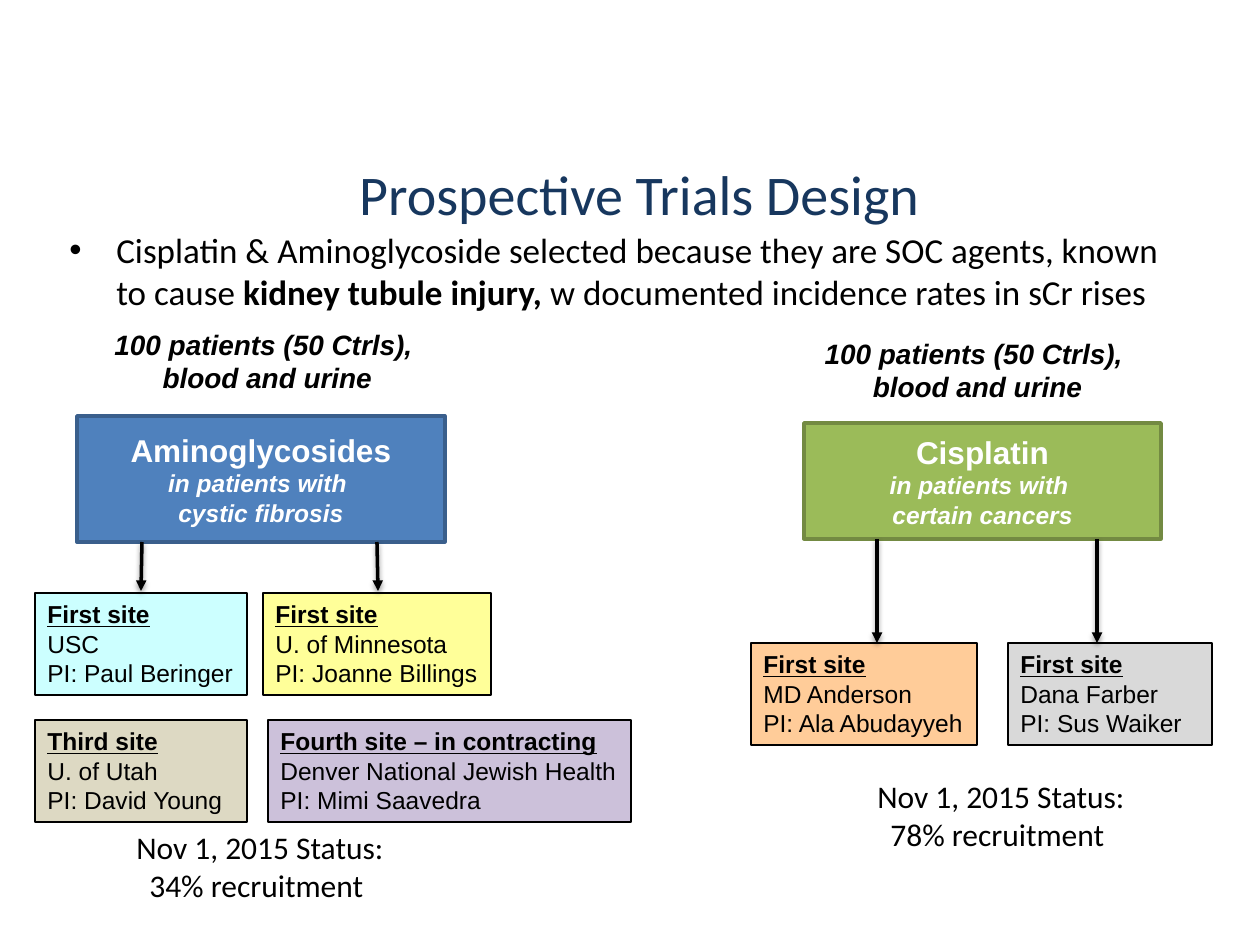
import pptx
import pptx.util
import pptx.dml.color
import pptx.enum.shapes
import pptx.enum.text
import pptx.oxml
import pptx.oxml.ns

PX = 914400 / 126
ALIGN = pptx.enum.text.PP_ALIGN
ANCHOR = pptx.enum.text.MSO_ANCHOR

TITLE_STYLE = dict(name="Calibri", size=32, color="17375E")
BODY = dict(name="Calibri", size=20, color="000000")
BODY_BOLD = dict(BODY, bold=True)
DRUG = dict(name="Arial", size=18, color="FFFFFF", bold=True)
GROUP = dict(DRUG, size=14, italic=True)
SITE = dict(name="Arial", size=14, color="000000")
SITE_HEAD = dict(SITE, bold=True, underline=True)
COHORT = dict(name="Arial", size=16, color="000000", bold=True, italic=True)
STATUS = dict(name="Calibri", size=18, color="000000")

TITLE = "Prospective Trials Design"
RATIONALE = [
    ("Cisplatin & Aminoglycoside selected because they are SOC agents, known to cause ", BODY),
    ("kidney tubule injury, ", BODY_BOLD),
    ("w documented incidence rates in sCr rises", BODY),
]
DRUGS = [
    ((77, 416, 368, 126), "4F81BD", "3A5F8C", ["Aminoglycosides", "in patients with ", "cystic fibrosis"]),
    ((804, 423, 357, 116), "9BBB59", "738A42", ["Cisplatin", "in patients with ", "certain cancers"]),
]
SITE_HEIGHT = 102
SITES = [
    (35, 593, 212, "CCFFFF", False, ["First site", "USC", "PI: Paul Beringer"]),
    (263, 593, 228, "FFFF99", False, ["First site", "U. of Minnesota", "PI: Joanne Billings"]),
    (35, 720, 212, "DDD9C3", True, ["Third site", "U. of Utah", "PI: David Young"]),
    (268, 720, 363, "CCC1DA", False,
     ["Fourth site – in contracting", "Denver National Jewish Health", "PI: Mimi Saavedra"]),
    (751, 643, 226, "FFCC99", False, ["First site", "MD Anderson", "PI: Ala Abudayyeh"]),
    (1008, 643, 204, "D9D9D9", True, ["First site", "Dana Farber", "PI: Sus Waiker"]),
]
NOTES = [
    ((100, 321, 327, 81), COHORT, ["100 patients (50 Ctrls),", " blood and urine"]),
    ((810, 330, 335, 81), COHORT, ["100 patients (50 Ctrls), ", "blood and urine"]),
    ((122, 822, 276, 89), STATUS, ["Nov 1, 2015 Status:", "34% recruitment "]),
    ((863, 771, 276, 89), STATUS, ["Nov 1, 2015 Status:", "78% recruitment "]),
]
ARROWS = [
    (142, 542, 141, 591), (377, 542, 378, 591),
    (877, 539, 877, 643), (1097, 539, 1097, 643),
]
SHADOW = (
    '<a:effectLst xmlns:a="http://schemas.openxmlformats.org/drawingml/2006/main">'
    '<a:outerShdw blurRad="39370" dist="20320" dir="5400000" rotWithShape="0">'
    '<a:srgbClr val="000000"><a:alpha val="38000"/></a:srgbClr>'
    '</a:outerShdw></a:effectLst>'
)


def emu(*lengths):
    return [round(v * PX) for v in lengths]


def rgb(value):
    return pptx.dml.color.RGBColor.from_string(value)


def add_run(p, text, style):
    r = p.add_run()
    r.text = text
    for key, value in style.items():
        if key == "color":
            r.font.color.rgb = rgb(value)
        else:
            setattr(r.font, key, pptx.util.Pt(value) if key == "size" else value)


def write(sp, paragraphs, align=ALIGN.CENTER, anchor=ANCHOR.TOP, wrap=False):
    tf = sp.text_frame
    tf.word_wrap = wrap
    tf.vertical_anchor = anchor
    for i, runs in enumerate(paragraphs):
        p = tf.add_paragraph() if i else tf.paragraphs[0]
        p.alignment = align
        for text, style in runs:
            add_run(p, text, style)


def lines(texts, first, rest):
    return [[(text, rest if i else first)] for i, text in enumerate(texts)]


def add_text(s, box, paragraphs, **layout):
    sp = s.shapes.add_textbox(*emu(*box))
    write(sp, paragraphs, **layout)
    return sp


def add_box(s, box, fill, line, width, paragraphs, **layout):
    sp = s.shapes.add_shape(pptx.enum.shapes.MSO_SHAPE.RECTANGLE, *emu(*box))
    sp.shadow.inherit = False
    sp.fill.solid()
    sp.fill.fore_color.rgb = rgb(fill)
    sp.line.color.rgb = rgb(line)
    sp.line.width = pptx.util.Pt(width)
    write(sp, paragraphs, **layout)


def add_arrow(s, ends):
    sp = s.shapes.add_connector(pptx.enum.shapes.MSO_CONNECTOR.STRAIGHT, *emu(*ends))
    sp.line.color.rgb = rgb("000000")
    sp.line.width = pptx.util.Pt(2)
    tail = pptx.oxml.parse_xml(
        '<a:tailEnd xmlns:a="http://schemas.openxmlformats.org/drawingml/2006/main" type="triangle"/>')
    sp.line._get_or_add_ln().append(tail)
    sp._element.spPr.append(pptx.oxml.parse_xml(SHADOW))


def add_bullet(p, indent):
    pPr = p._p.get_or_add_pPr()
    pPr.set("marL", str(indent))
    pPr.set("indent", str(-indent))
    pPr.append(pptx.oxml.parse_xml(
        '<a:buFont xmlns:a="http://schemas.openxmlformats.org/drawingml/2006/main" typeface="Arial"/>'))
    pPr.append(pptx.oxml.parse_xml(
        '<a:buChar xmlns:a="http://schemas.openxmlformats.org/drawingml/2006/main" char="•"/>'))


def main():
    prs = pptx.Presentation()
    prs.slide_width, prs.slide_height = emu(1260, 945)
    s = prs.slides.add_slide(prs.slide_layouts[6])
    add_text(s, (66, 115, 1147, 157), [[(TITLE, TITLE_STYLE)]], anchor=ANCHOR.MIDDLE, wrap=True)
    body = add_text(s, (57, 222, 1148, 605), [RATIONALE], align=ALIGN.LEFT, wrap=True)
    add_bullet(body.text_frame.paragraphs[0], emu(47)[0])
    for box, fill, line, texts in DRUGS:
        add_box(s, box, fill, line, 2, lines(texts, DRUG, GROUP), anchor=ANCHOR.MIDDLE)
    for x, y, w, fill, wrap, texts in SITES:
        add_box(s, (x, y, w, SITE_HEIGHT), fill, "000000", 0.75,
                lines(texts, SITE_HEAD, SITE), align=ALIGN.LEFT, wrap=wrap)
    for box, style, texts in NOTES:
        add_text(s, box, lines(texts, style, style))
    for ends in ARROWS:
        add_arrow(s, ends)
    prs.save("out.pptx")


if __name__ == "__main__":
    main()
